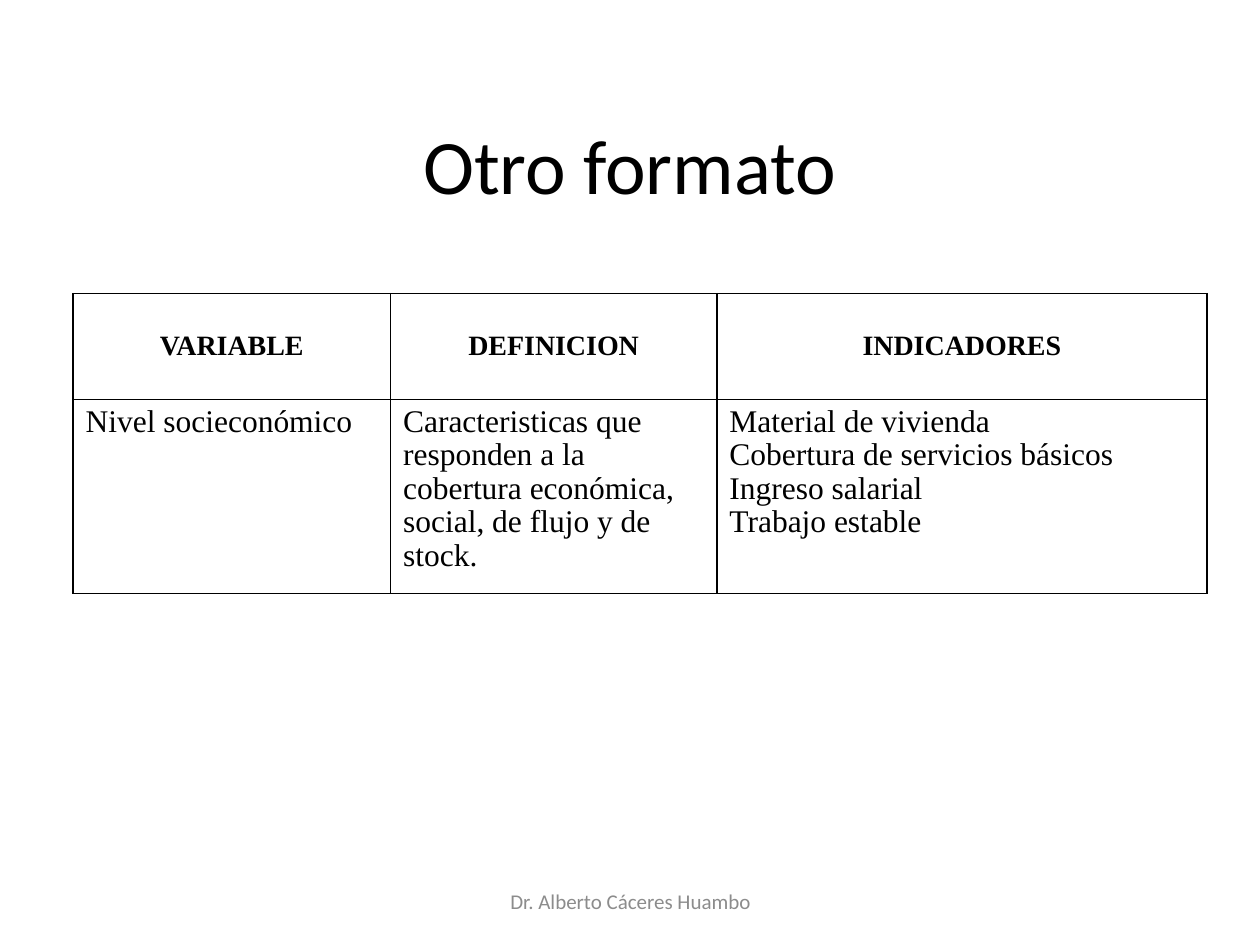
"""Build a slide with a title, a table of variables and a footer."""
from lxml import etree
from pptx import Presentation
from pptx.dml.color import RGBColor
from pptx.enum.text import MSO_ANCHOR, PP_ALIGN
from pptx.oxml.ns import qn
from pptx.util import Inches, Pt

CENTER, LEFT = PP_ALIGN.CENTER, PP_ALIGN.LEFT
MIDDLE, TOP = MSO_ANCHOR.MIDDLE, MSO_ANCHOR.TOP
BLACK, GRAY, WHITE = "000000", "8C8C8C", "FFFFFF"

LABELS = [
    ("Dr. Alberto Cáceres Huambo", (3.42, 6.95, 3.17, 0.4), 12, GRAY),
    ("Otro formato", (0.5, 0.67, 9, 1.25), 44, BLACK),
]
ROWS = [
    [["VARIABLE"], ["DEFINICION"], ["INDICADORES"]],
    [
        ["Nivel socieconómico"],
        ["Caracteristicas que responden a la cobertura económica, "
         "social, de flujo y de stock."],
        ["Material de vivienda", "Cobertura de servicios básicos",
         "Ingreso salarial", "Trabajo estable"],
    ],
]
COL_WIDTHS = [2.52, 2.59, 3.89]
ROW_HEIGHTS = [0.84, 1.48]
TABLE_LEFT, TABLE_TOP = 0.58, 2.33


def rgb(color):
    return RGBColor.from_string(color)


def write(tf, lines, size, font, color=BLACK, align=LEFT, bold=False):
    for i, line in enumerate(lines):
        p = tf.add_paragraph() if i else tf.paragraphs[0]
        p.text = line
        p.alignment = align
        p.font.size, p.font.name, p.font.bold = Pt(size), font, bold
        p.font.color.rgb = rgb(color)
        yield p


def add_label(s, text, box, size, color):
    tf = s.shapes.add_textbox(*map(Inches, box)).text_frame
    tf.word_wrap = True
    tf.vertical_anchor = MIDDLE
    list(write(tf, [text], size, "Calibri", color, CENTER))


def add_borders(cell):
    props = cell._tc.get_or_add_tcPr()
    for i, side in enumerate(("lnL", "lnR", "lnT", "lnB")):
        line = etree.Element(qn("a:" + side), w=str(Pt(1)))
        fill = etree.SubElement(line, qn("a:solidFill"))
        etree.SubElement(fill, qn("a:srgbClr"), val=BLACK)
        props.insert(i, line)


def add_variables_table(s):
    box = (TABLE_LEFT, TABLE_TOP, sum(COL_WIDTHS), sum(ROW_HEIGHTS))
    table = s.shapes.add_table(
        len(ROWS), len(COL_WIDTHS), *map(Inches, box)).table
    table.horz_banding = False
    for column, width in zip(table.columns, COL_WIDTHS):
        column.width = Inches(width)
    for r, row in enumerate(ROWS):
        header = r == 0
        table.rows[r].height = Inches(ROW_HEIGHTS[r])
        for c, lines in enumerate(row):
            cell = table.cell(r, c)
            cell.fill.solid()
            cell.fill.fore_color.rgb = rgb(WHITE)
            cell.vertical_anchor = MIDDLE if header else TOP
            for p in write(cell.text_frame, lines, 16 if header else 18,
                           "Times New Roman", bold=header,
                           align=CENTER if header else LEFT):
                p.line_spacing = 0.96
            add_borders(cell)


def main():
    prs = Presentation()
    prs.slide_width, prs.slide_height = Inches(10), Inches(7.5)
    s = prs.slides.add_slide(prs.slide_layouts[6])
    for label in LABELS:
        add_label(s, *label)
    add_variables_table(s)
    prs.save("out.pptx")


if __name__ == "__main__":
    main()
